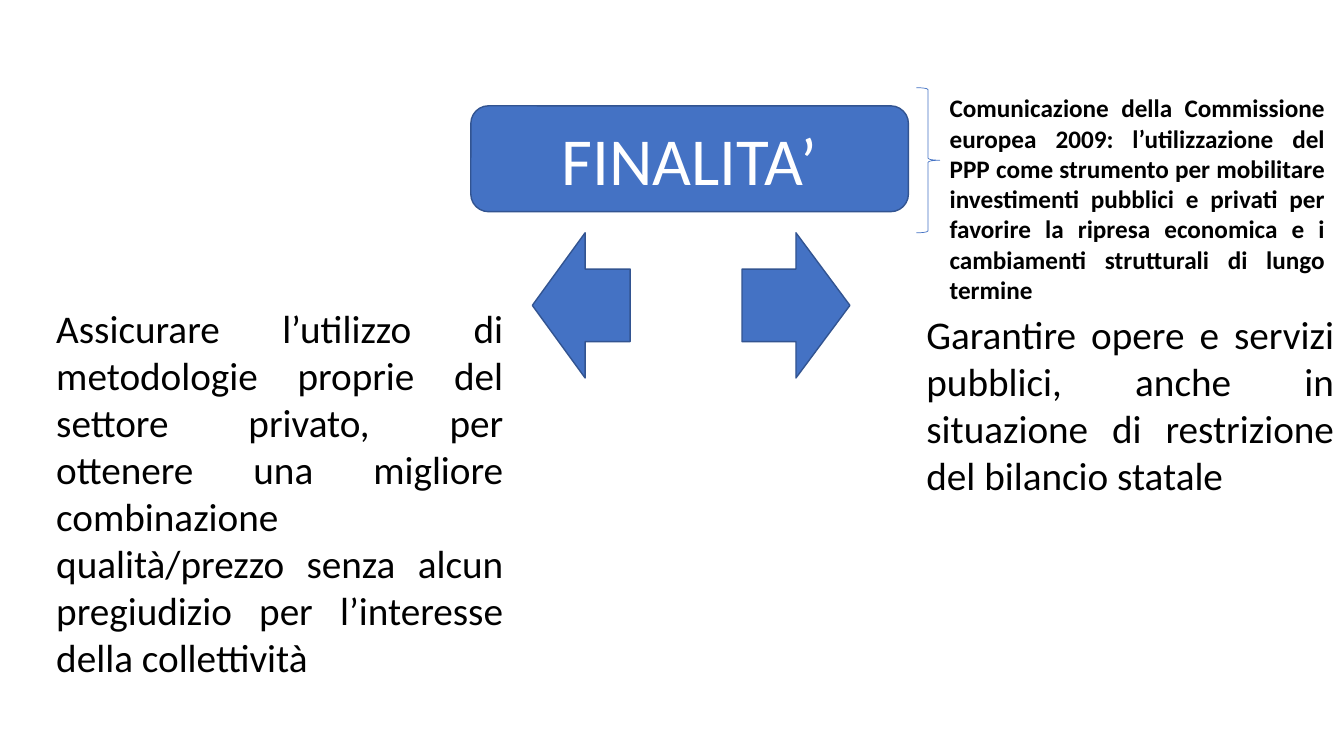
from dataclasses import dataclass

import pptx
import pptx.dml.color
import pptx.enum.shapes
import pptx.enum.text
import pptx.util
from pptx.shapes.autoshape import Shape
from pptx.slide import Slide

PX = 9144  # EMU per px, 100 px to the inch
Preset = pptx.enum.shapes.MSO_SHAPE
Align = pptx.enum.text.PP_ALIGN
Anchor = pptx.enum.text.MSO_ANCHOR


@dataclass(frozen=True)
class Theme:
    font: str = "Calibri"
    fill: str = "4472C4"
    outline: str = "325491"
    ink: str = "000000"
    light: str = "FFFFFF"
    title_size: int = 48
    body_size: int = 28
    note_size: int = 18


THEME = Theme()


@dataclass(frozen=True)
class Box:
    left: int
    top: int
    width: int
    height: int

    def emu(self) -> tuple[int, int, int, int]:
        return self.left * PX, self.top * PX, self.width * PX, self.height * PX


@dataclass(frozen=True)
class Figure:
    preset: Preset
    box: Box
    fill: str | None = THEME.fill
    line: str = THEME.outline
    line_width: float = 1
    adjustments: tuple[float, ...] = ()


@dataclass(frozen=True)
class Passage:
    box: Box
    text: str
    size: int = THEME.body_size
    bold: bool = False


ARROWS_AND_BRACE = (
    Figure(Preset.RIGHT_ARROW, Box(736, 231, 107, 144)),
    Figure(Preset.LEFT_ARROW, Box(528, 231, 97, 144), adjustments=(0.5, 0.54)),
    Figure(Preset.RIGHT_BRACE, Box(909, 87, 23, 144), None, THEME.fill, 0.5),
)
TITLE = Figure(Preset.ROUNDED_RECTANGLE, Box(467, 105, 434, 105))
PASSAGES = (
    Passage(
        Box(909, 303, 424, 199),
        "Garantire opere e servizi pubblici, anche in situazione di "
        "restrizione del bilancio statale",
    ),
    Passage(
        Box(46, 297, 463, 387),
        "Assicurare l’utilizzo di metodologie proprie del settore privato, "
        "per ottenere una migliore combinazione qualità/prezzo senza alcun "
        "pregiudizio per l’interesse della collettività",
    ),
    Passage(
        Box(932, 87, 392, 222),
        "Comunicazione della Commissione europea 2009: l’utilizzazione del "
        "PPP come strumento per mobilitare investimenti pubblici e privati "
        "per favorire la ripresa economica e i cambiamenti strutturali di "
        "lungo termine",
        THEME.note_size,
        True,
    ),
)


def rgb(value: str) -> pptx.dml.color.RGBColor:
    return pptx.dml.color.RGBColor.from_string(value)


def write(shape: Shape, text: str, size: int, color: str, align: Align,
          bold: bool = False) -> None:
    frame = shape.text_frame
    frame.word_wrap = True
    para = frame.paragraphs[0]
    para.text = text
    para.alignment = align
    para.font.name = THEME.font
    para.font.size = pptx.util.Pt(size)
    para.font.bold = bold
    para.font.color.rgb = rgb(color)


def draw_figure(page: Slide, figure: Figure) -> Shape:
    shape = page.shapes.add_shape(figure.preset, *figure.box.emu())
    shape.shadow.inherit = False
    for index, value in enumerate(figure.adjustments):
        shape.adjustments[index] = value
    if figure.fill is None:
        shape.fill.background()
    else:
        shape.fill.solid()
        shape.fill.fore_color.rgb = rgb(figure.fill)
    shape.line.color.rgb = rgb(figure.line)
    shape.line.width = pptx.util.Pt(figure.line_width)
    return shape


def draw_passage(page: Slide, passage: Passage) -> None:
    shape = page.shapes.add_textbox(*passage.box.emu())
    write(shape, passage.text, passage.size, THEME.ink, Align.JUSTIFY, passage.bold)
    shape.text_frame.auto_size = pptx.enum.text.MSO_AUTO_SIZE.SHAPE_TO_FIT_TEXT


def main() -> None:
    deck = pptx.Presentation()
    deck.slide_width, deck.slide_height = 1333 * PX, 750 * PX
    page = deck.slides.add_slide(deck.slide_layouts[6])
    for figure in ARROWS_AND_BRACE:
        draw_figure(page, figure)
    title = draw_figure(page, TITLE)
    write(title, "FINALITA’", THEME.title_size, THEME.light, Align.CENTER)
    title.text_frame.vertical_anchor = Anchor.MIDDLE
    for passage in PASSAGES:
        draw_passage(page, passage)
    deck.save("out.pptx")


if __name__ == "__main__":
    main()
